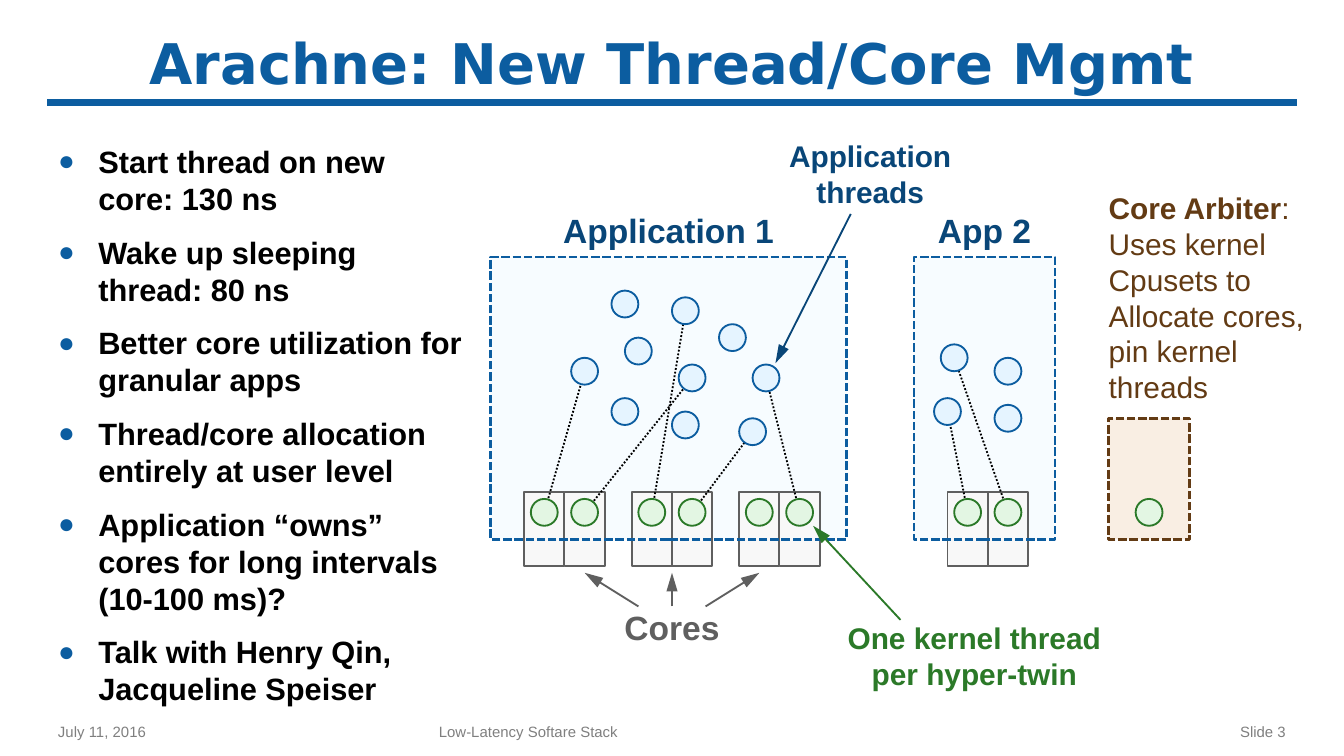
from lxml import etree
from pptx import Presentation
from pptx.dml.color import RGBColor
from pptx.enum.dml import MSO_LINE
from pptx.enum.shapes import MSO_CONNECTOR, MSO_SHAPE
from pptx.enum.text import MSO_ANCHOR, PP_ALIGN
from pptx.oxml.ns import qn
from pptx.util import Inches, Pt

RECT, OVAL = MSO_SHAPE.RECTANGLE, MSO_SHAPE.OVAL
LEFT, CENTER, RIGHT = PP_ALIGN.LEFT, PP_ALIGN.CENTER, PP_ALIGN.RIGHT
TOP, MIDDLE = MSO_ANCHOR.TOP, MSO_ANCHOR.MIDDLE
DASH, DOT = MSO_LINE.SQUARE_DOT, MSO_LINE.ROUND_DOT

BLACK = RGBColor(0x00, 0x00, 0x00)
BLUE = RGBColor(0x0C, 0x5D, 0xA0)
NAVY = RGBColor(0x09, 0x46, 0x78)
APP_FILL = RGBColor(0xF7, 0xFC, 0xFF)
THREAD_FILL = RGBColor(0xE5, 0xF4, 0xFF)
GREEN = RGBColor(0x2B, 0x79, 0x28)
KERNEL_FILL = RGBColor(0xE3, 0xF6, 0xE3)
GRAY = RGBColor(0x5F, 0x5F, 0x5F)
CORE_FILL = RGBColor(0xF8, 0xF8, 0xF8)
BROWN = RGBColor(0x63, 0x3B, 0x14)
ARBITER_FILL = RGBColor(0xF9, 0xEE, 0xE3)
FOOTER = RGBColor(0x7F, 0x7F, 0x7F)

prs = Presentation()
prs.slide_width = Inches(10)
prs.slide_height = prs.slide_width * 9 // 16
s = prs.slides.add_slide(prs.slide_layouts[5])

# Everything sits on a grid of 200 columns; cells are square.
CELL = prs.slide_width // 200
ROW_START = CELL // 4


def add_box(kind, col, row, cols, rows, fill=None, line=None, width=1, dash=None):
    sp = s.shapes.add_shape(kind, int(col * CELL), int(ROW_START + row * CELL),
                            int(cols * CELL), int(rows * CELL))
    sp.shadow.inherit = False
    if fill is None:
        sp.fill.background()
    else:
        sp.fill.solid()
        sp.fill.fore_color.rgb = fill
    if line is None:
        sp.line.fill.background()
    else:
        sp.line.color.rgb = line
        sp.line.width = Pt(width)
        sp.line.dash_style = dash


def add_line(start, end, color, width=1, dash=None, arrow=False):
    (c1, r1), (c2, r2) = start, end
    cx = s.shapes.add_connector(
        MSO_CONNECTOR.STRAIGHT, int(c1 * CELL), int(ROW_START + r1 * CELL),
        int(c2 * CELL), int(ROW_START + r2 * CELL))
    cx.line.color.rgb = color
    cx.line.width = Pt(width)
    cx.line.dash_style = dash
    if arrow:
        etree.SubElement(cx.line._get_or_add_ln(), qn("a:tailEnd"),
                         type="triangle", w="med", len="lg")
    etree.SubElement(cx._element.spPr, qn("a:effectLst"))


# Title and rule
title = s.shapes.title
title.left, title.top = int(6.67 * CELL), ROW_START + 3 * CELL
title.width, title.height = int(186.67 * CELL), 12 * CELL
tf = title.text_frame
tf.text = "Arachne: New Thread/Core Mgmt"
tf.vertical_anchor = MIDDLE
p = tf.paragraphs[0]
p.alignment = CENTER
font = p.runs[0].font
font.name, font.size, font.bold = "DejaVu Sans", Pt(30), True
font.color.rgb = BLUE
add_line((7, 15), (193, 15), BLUE, 3.5)

# Applications, cores and threads
apps = [(73, 38, 53, 42), (136, 38, 21, 42)]
for app in apps:
    add_box(RECT, *app, fill=APP_FILL)

KERNEL_ROW = 76
kernel_cols = []
for core in (78, 94, 110, 141):
    for twin in (core, core + 6):
        add_box(RECT, twin, 73, 6, 11, CORE_FILL, GRAY)
        kernel_cols.append(twin + 3)

# Running threads: kernel thread column, centre of its application thread
links = [(81, (87, 55)), (87, (103, 56)), (97, (102, 46)), (103, (112, 64)),
         (119, (114, 56)), (144, (141, 61)), (150, (142, 53))]
for kernel_col, thread in links:
    add_line((kernel_col, KERNEL_ROW), thread, BLACK, dash=DOT)

idle = [(95, 52), (93, 61), (109, 50), (102, 63), (93, 45), (150, 55), (150, 62)]
for col, row in idle + [thread for _, thread in links]:
    add_box(OVAL, col - 2, row - 2, 4, 4, THREAD_FILL, BLUE)

add_box(RECT, 165, 62, 12, 18, ARBITER_FILL, BROWN, 1.5, DASH)
for col in kernel_cols + [171]:
    add_box(OVAL, col - 2, KERNEL_ROW - 2, 4, 4, KERNEL_FILL, GREEN)
for app in apps:
    add_box(RECT, *app, line=BLUE, width=1.5, dash=DASH)

# Arrows from labels
arrows = [((95, 90), (87, 85), GRAY), ((100, 90), (100, 85), GRAY),
          ((105, 90), (113, 85), GRAY), ((134, 92), (121, 78), GREEN),
          ((126.6, 31.6), (115.4, 53.8), NAVY)]
for start, end, color in arrows:
    add_line(start, end, color, arrow=True)

# Text: grid box, lines, size, colour, bold, alignment, anchor, inset
bullets = ["Start thread on new core: 130 ns",
           "Wake up sleeping thread: 80 ns",
           "Better core utilization for granular apps",
           "Thread/core allocation entirely at user level",
           "Application “owns” cores for long intervals (10-100 ms)?",
           "Talk with Henry Qin, Jacqueline Speiser"]
arbiter = ["Core Arbiter", "Uses kernel", "Cpusets to", "Allocate cores,",
           "pin kernel", "threads"]
texts = [
    ((6.67, 20, 64.4, 81), bullets, 16.5, BLACK, True, LEFT, TOP, 0.1),
    ((6.67, 106.2, 50, 4.8), ["July 11, 2016"], 8, FOOTER, False, LEFT, MIDDLE, 0.1),
    ((63.33, 106.2, 75, 4.8), ["Low-Latency Softare Stack"], 8, FOOTER, False, LEFT, MIDDLE, 0.1),
    ((143.33, 106.2, 50, 4.8), ["Slide 3"], 8, FOOTER, False, RIGHT, MIDDLE, 0.1),
    ((74, 31, 51, 6), ["Application 1"], 18, NAVY, True, CENTER, TOP, 0),
    ((136, 31, 21, 6), ["App 2"], 18, NAVY, True, CENTER, TOP, 0),
    ((90, 90, 20, 6), ["Cores"], 18, GRAY, True, CENTER, TOP, 0),
    ((125, 92, 40, 10.8), ["One kernel thread per hyper-twin"], 16, GREEN, True, CENTER, TOP, 0),
    ((114, 20.2, 31, 10.8), ["Application", "threads"], 16, NAVY, True, CENTER, TOP, 0),
    ((165, 28, 29.4, 32.4), arbiter, 16, BROWN, False, LEFT, TOP, 0),
]
for (col, row, cols, rows), lines, size, color, bold, align, anchor, inset in texts:
    tb = s.shapes.add_textbox(int(col * CELL), int(ROW_START + row * CELL),
                              int(cols * CELL), int(rows * CELL))
    tf = tb.text_frame
    tf.text = "\n".join(lines)
    tf.word_wrap = lines is not arbiter
    tf.vertical_anchor = anchor
    tf.margin_left = tf.margin_right = Inches(inset)
    tf.margin_top = tf.margin_bottom = Inches(inset / 2)
    if lines is arbiter:
        tf.paragraphs[0].add_run().text = ":"
    for p in tf.paragraphs:
        p.alignment = align
        for r in p.runs:
            r.font.name, r.font.size = "Arial", Pt(size)
            r.font.bold = bold or r.text == "Core Arbiter"
            r.font.color.rgb = color
        if lines is bullets:
            p.space_before = Pt(9)
            pPr = p._p.get_or_add_pPr()
            pPr.set("marL", str(Inches(0.3)))
            pPr.set("indent", str(-Inches(0.3)))
            bu_color = etree.SubElement(pPr, qn("a:buClr"))
            etree.SubElement(bu_color, qn("a:srgbClr"), val=str(BLUE))
            etree.SubElement(pPr, qn("a:buSzPct"), val="90000")
            etree.SubElement(pPr, qn("a:buFont"), typeface="Arial")
            etree.SubElement(pPr, qn("a:buChar"), char="●")

prs.save("out.pptx")
